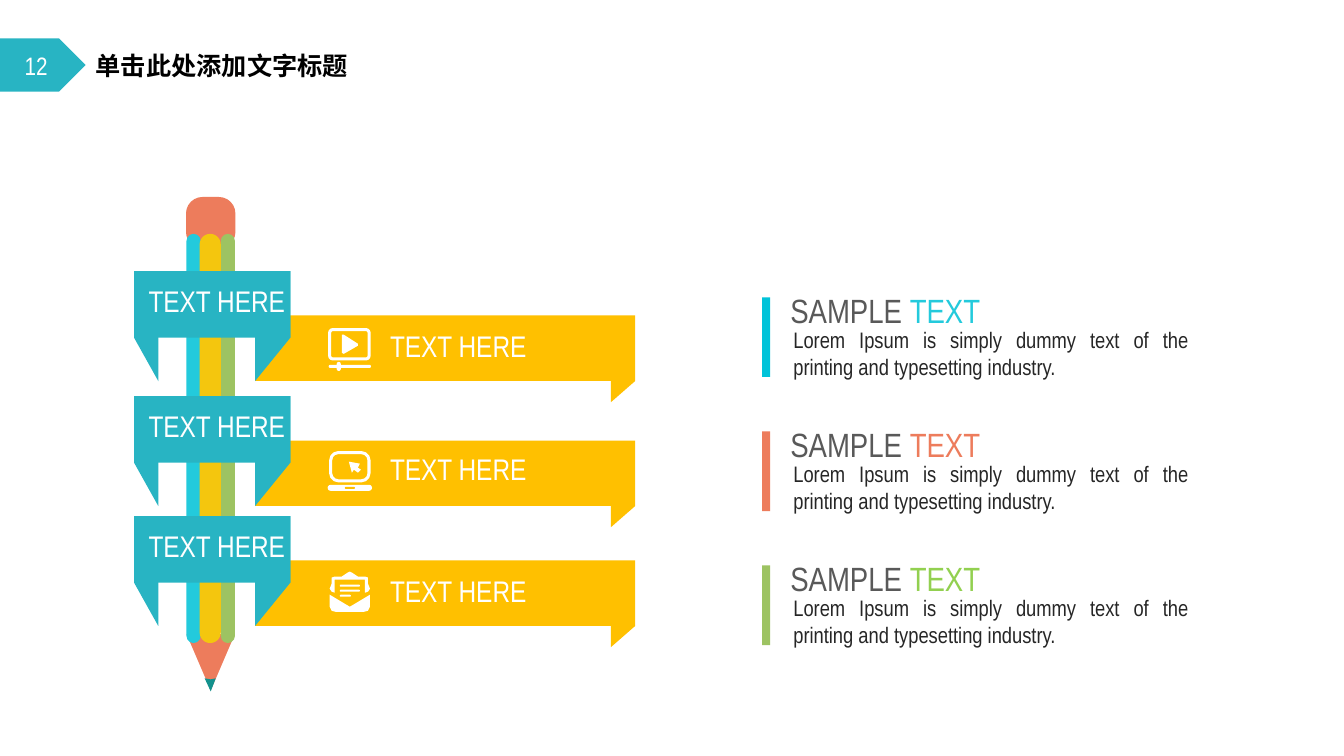
import pptx
import pptx.dml.color
import pptx.enum.shapes
import pptx.enum.text
import pptx.util

Inches = pptx.util.Inches
Kind = pptx.enum.shapes.MSO_SHAPE
Align = pptx.enum.text.PP_ALIGN

FONT = "Arial Narrow"
TEAL, AMBER, CORAL, WHITE = "28B4C3", "FFC000", "ED7C5C", "FFFFFF"

TITLE = "单击此处添加文字标题"
NUMBER = "12"
LABEL = "TEXT HERE"
# ribbon top, caption top
RIBBONS = [(2.69, 3.2), (3.93, 4.42), (5.12, 5.63)]
# colour of the highlighted word, colour of the bar
SAMPLES = [("23CADC", "00C3D9"), (CORAL, CORAL), ("92D050", "9DC362")]
SAMPLE_BODY = ("Lorem Ipsum is simply dummy text of the printing "
               "and typesetting industry. ")
SAMPLE_TOP, SAMPLE_PITCH = 2.83, 1.33
# left, width, colour
PENCIL_STRIPES = [(2.19, 0.14, "9DC362"), (1.85, 0.14, "23CADC"), (1.98, 0.21, "F4C60E")]

# Icon outlines, measured from the top left corner of each icon
PLAY = [(0.13, 0.06), (0.15, 0.06), (0.29, 0.15), (0.29, 0.17), (0.15, 0.25), (0.13, 0.24)]
POINTER = [(0.2, 0.11), (0.31, 0.13), (0.29, 0.17), (0.32, 0.19),
           (0.29, 0.22), (0.25, 0.19), (0.23, 0.22)]
ENVELOPE_LID = [(0.02, 0.2), (0, 0.17), (0.02, 0.12), (0.02, 0.06), (0.05, 0.05),
                (0.12, 0.05), (0.18, 0.01), (0.2, 0), (0.22, 0.01), (0.28, 0.05),
                (0.35, 0.05), (0.38, 0.06), (0.38, 0.12), (0.4, 0.17), (0.38, 0.2),
                (0.35, 0.21), (0.35, 0.08), (0.05, 0.08), (0.05, 0.21)]
ENVELOPE_BODY = [(0, 0.23), (0.2, 0.35), (0.4, 0.23), (0.4, 0.35), (0.38, 0.39),
                 (0.34, 0.4), (0.06, 0.4), (0.02, 0.39), (0, 0.35)]

deck = pptx.Presentation()
deck.slide_width, deck.slide_height = Inches(13.33), Inches(7.5)
page = deck.slides.add_slide(deck.slide_layouts[5])


def color(value):
    return pptx.dml.color.RGBColor.from_string(value)


def paint(shape, fill):
    shape.shadow.inherit = False
    shape.fill.solid()
    shape.fill.fore_color.rgb = color(fill)
    shape.line.fill.background()
    return shape


def add_block(kind, left, top, width, height, fill, rounding=None):
    shape = page.shapes.add_shape(kind, Inches(left), Inches(top), Inches(width), Inches(height))
    if rounding is not None:
        shape.adjustments[0] = rounding
    return paint(shape, fill)


def add_polygon(points, fill, left=0, top=0):
    corners = [(Inches(left + x), Inches(top + y)) for x, y in points]
    builder = page.shapes.build_freeform(*corners[0])
    builder.add_line_segments(corners[1:], close=True)
    return paint(builder.convert_to_shape(), fill)


def write(frame, runs, size, align=Align.LEFT, bold=False):
    """Fill the first paragraph with (text, colour) runs."""
    frame.word_wrap = True
    para = frame.paragraphs[0]
    para.alignment = align
    for text, tint in runs:
        span = para.add_run()
        span.text = text
        span.font.name = FONT
        span.font.size = pptx.util.Pt(size)
        span.font.bold = bold
        span.font.color.rgb = color(tint)


def add_text(left, top, width, height, runs, size, align=Align.LEFT):
    box = page.shapes.add_textbox(Inches(left), Inches(top), Inches(width), Inches(height))
    write(box.text_frame, runs, size, align)


def add_frame(left, top, width, height, rounding, weight):
    frame = add_block(Kind.ROUNDED_RECTANGLE, left, top, width, height, WHITE, rounding)
    frame.fill.background()
    frame.line.color.rgb = color(WHITE)
    frame.line.width = Inches(weight)


def add_pill(left, top, width, height, fill=WHITE):
    add_block(Kind.ROUNDED_RECTANGLE, left, top, width, height, fill, 0.5)


def draw_pencil():
    eraser = add_block(Kind.ROUNDED_RECTANGLE, 1.85, 1.96, 0.48, 0.5, CORAL, 0.33)
    eraser.line.color.rgb = color(CORAL)
    eraser.line.width = pptx.util.Pt(0.75)
    add_polygon([(1.85, 6.29), (2.33, 6.29), (2.09, 6.85)], CORAL)
    add_polygon([(2.03, 6.73), (2.09, 6.74), (2.14, 6.73), (2.09, 6.86)], "13918D")
    for left, width, fill in PENCIL_STRIPES:
        add_pill(left, 2.32, width, 4.06, fill)


def draw_ribbon(top, caption_top):
    fold, low = top + 0.66, top + 1.09
    add_polygon([(6.06, low), (6.3, low), (6.06, low + 0.21)], AMBER)
    add_block(Kind.RECTANGLE, 2.53, low - 0.65, 3.77, 0.65, AMBER)
    for inner, outer in [(1.57, 1.33), (2.53, 2.88)]:
        add_polygon([(inner, low), (outer, fold), (outer, top), (inner, top)], TEAL)
    add_block(Kind.RECTANGLE, 1.33, top, 1.55, 0.66, TEAL)
    add_text(1.34, top + 0.07, 1.62, 0.46, [(LABEL, WHITE)], 21.3, Align.CENTER)
    add_text(3.77, caption_top, 2, 0.46, [(LABEL, WHITE)], 21.3)


def draw_video_icon(left, top):
    add_polygon(PLAY, WHITE, left, top)
    add_frame(left + 0.01, top + 0.01, 0.39, 0.29, 0.1, 0.03)
    add_pill(left, top + 0.36, 0.42, 0.03)
    add_pill(left + 0.08, top + 0.33, 0.04, 0.09)


def draw_laptop_icon(left, top):
    add_pill(left - 0.01, top + 0.34, 0.44, 0.06)
    add_pill(left + 0.16, top + 0.36, 0.1, 0.02, AMBER)
    add_frame(left + 0.02, top + 0.02, 0.38, 0.28, 0.27, 0.03)
    add_polygon(POINTER, WHITE, left, top)


def draw_mail_icon(left, top):
    add_polygon(ENVELOPE_BODY, WHITE, left, top)
    add_polygon(ENVELOPE_LID, WHITE, left, top)
    for line, width in enumerate([0.2, 0.2, 0.11]):
        add_pill(left + 0.1, top + 0.13 + 0.05 * line, width, 0.02)


def draw_sample(top, accent, bar):
    add_text(7.74, top, 2.8, 0.5, [("SAMPLE ", "595959"), ("TEXT", accent)], 24)
    add_text(7.77, top + 0.36, 4.12, 0.64, [(SAMPLE_BODY, "262626")], 16, Align.JUSTIFY)
    add_block(Kind.RECTANGLE, 7.56, top + 0.12, 0.08, 0.79, bar)


draw_pencil()
for ribbon in RIBBONS:
    draw_ribbon(*ribbon)
draw_video_icon(3.26, 3.26)
draw_laptop_icon(3.26, 4.47)
draw_mail_icon(3.27, 5.67)
for row, (accent, bar) in enumerate(SAMPLES):
    draw_sample(SAMPLE_TOP + row * SAMPLE_PITCH, accent, bar)

tag = add_block(Kind.PENTAGON, 0, 0.38, 0.85, 0.53, TEAL)
tag.text_frame.vertical_anchor = pptx.enum.text.MSO_ANCHOR.MIDDLE
write(tag.text_frame, [(NUMBER, WHITE)], 18, Align.CENTER)

title = page.shapes.title
title.left, title.top = Inches(0.85), Inches(0.45)
title.width, title.height = Inches(2.94), Inches(0.4)
title.text_frame.auto_size = pptx.enum.text.MSO_AUTO_SIZE.NONE
title.text_frame.vertical_anchor = pptx.enum.text.MSO_ANCHOR.TOP
write(title.text_frame, [(TITLE, "000000")], 18, bold=True)

deck.save("out.pptx")
